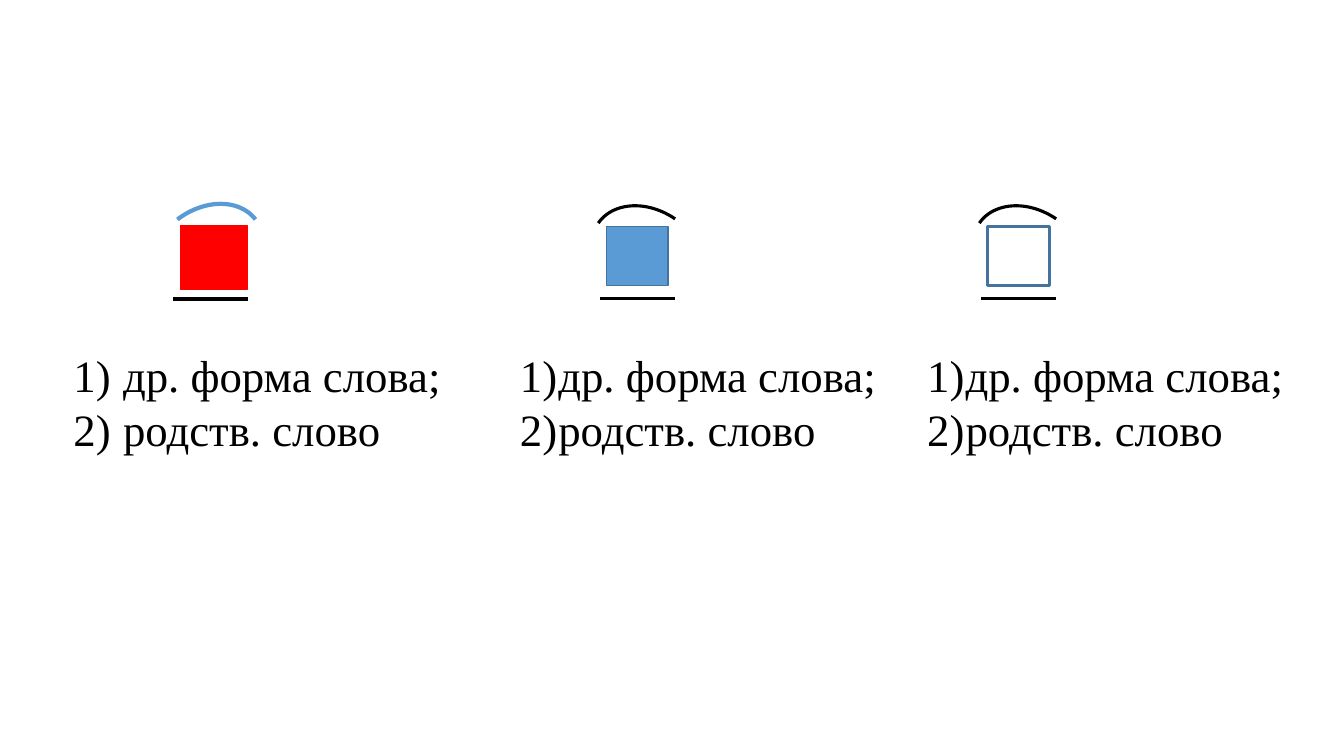
import dataclasses

import lxml.etree
import pptx
import pptx.dml.color
import pptx.enum.shapes
import pptx.enum.text
import pptx.oxml.ns
import pptx.util

Pt = pptx.util.Pt


def color(value):
    return pptx.dml.color.RGBColor.from_string(value)


@dataclasses.dataclass(frozen=True)
class Theme:
    black: str = "000000"
    white: str = "FFFFFF"
    red: str = "FF0000"
    blue: str = "5B9BD5"
    dark_blue: str = "43739E"
    font: str = "Times New Roman"
    text_size: int = 32


@dataclasses.dataclass(frozen=True)
class Symbol:
    left: float
    top: float
    width: float
    height: float
    fill: str
    outline: str
    outline_width: float
    arc_color: str = Theme.black
    arc_width: float = 2.25
    arc_box: tuple = (-3.6, -21.6, 67, 87.1)
    arc_rotation: float = 304.4
    underline_gap: float = 9.3
    underline_length: float = 54
    underline_width: float = 2.25


@dataclasses.dataclass(frozen=True)
class Rule:
    left: float
    width: float
    indent: float
    symbol: Symbol


THEME = Theme()
RULE_TOP, RULE_HEIGHT = 244.8, 85
CHECKS = ("др. форма слова;", "родств. слово")
RULES = (
    Rule(45.4, 357, 35.4, Symbol(
        128.9, 161.3, 47.5, 45.4, THEME.red, THEME.red, 1,
        THEME.blue, 3, (-25.9, -11.5, 88.6, 67.7), 322.6, 7.1, 53.3, 3)),
    Rule(364.3, 327.6, 27.4, Symbol(
        433.4, 162, 43.9, 41.8, THEME.blue, THEME.dark_blue, 1)),
    Rule(655.2, 278.6, 27.4, Symbol(
        705.6, 162, 43.9, 41.8, THEME.white, THEME.dark_blue, 2.25)),
)


def add_outlined(slide, kind, box, line_color, line_width):
    shape = slide.shapes.add_shape(kind, *map(Pt, box))
    shape.shadow.inherit = False
    shape.line.color.rgb = color(line_color)
    shape.line.width = Pt(line_width)
    return shape


def add_symbol(slide, symbol):
    kinds = pptx.enum.shapes.MSO_SHAPE
    box = (symbol.left, symbol.top, symbol.width, symbol.height)
    square = add_outlined(slide, kinds.RECTANGLE, box, symbol.outline, symbol.outline_width)
    square.fill.solid()
    square.fill.fore_color.rgb = color(symbol.fill)

    x, y, width, height = symbol.arc_box
    arc_box = (symbol.left + x, symbol.top + y, width, height)
    arc = add_outlined(slide, kinds.ARC, arc_box, symbol.arc_color, symbol.arc_width)
    arc.fill.background()
    arc.rotation = symbol.arc_rotation

    start = symbol.left - 5
    level = symbol.top + symbol.height + symbol.underline_gap
    underline = slide.shapes.add_connector(
        pptx.enum.shapes.MSO_CONNECTOR.STRAIGHT,
        Pt(start), Pt(level), Pt(start + symbol.underline_length), Pt(level))
    underline.line.color.rgb = color(THEME.black)
    underline.line.width = Pt(symbol.underline_width)
    lxml.etree.SubElement(underline._element.spPr, pptx.oxml.ns.qn("a:effectLst"))


def add_checks(slide, left, top, width, height, indent):
    text_box = slide.shapes.add_textbox(Pt(left), Pt(top), Pt(width), Pt(height))
    frame = text_box.text_frame
    frame.word_wrap = True
    frame.auto_size = pptx.enum.text.MSO_AUTO_SIZE.SHAPE_TO_FIT_TEXT
    frame.text = "\n".join(CHECKS)
    for paragraph in frame.paragraphs:
        properties = paragraph._p.get_or_add_pPr()
        properties.set("marL", str(Pt(indent)))
        properties.set("indent", str(-Pt(indent)))
        numbering = lxml.etree.SubElement(properties, pptx.oxml.ns.qn("a:buAutoNum"))
        numbering.set("type", "arabicParenR")
        paragraph.font.name = THEME.font
        paragraph.font.size = Pt(THEME.text_size)
        paragraph.font.color.rgb = color(THEME.black)


def add_rule(slide, rule):
    add_symbol(slide, rule.symbol)
    add_checks(slide, rule.left, RULE_TOP, rule.width, RULE_HEIGHT, rule.indent)


def main():
    presentation = pptx.Presentation()
    presentation.slide_width = Pt(960)
    presentation.slide_height = Pt(540)
    slide = presentation.slides.add_slide(presentation.slide_layouts[6])
    for rule in RULES:
        add_rule(slide, rule)
    presentation.save("out.pptx")


if __name__ == "__main__":
    main()
